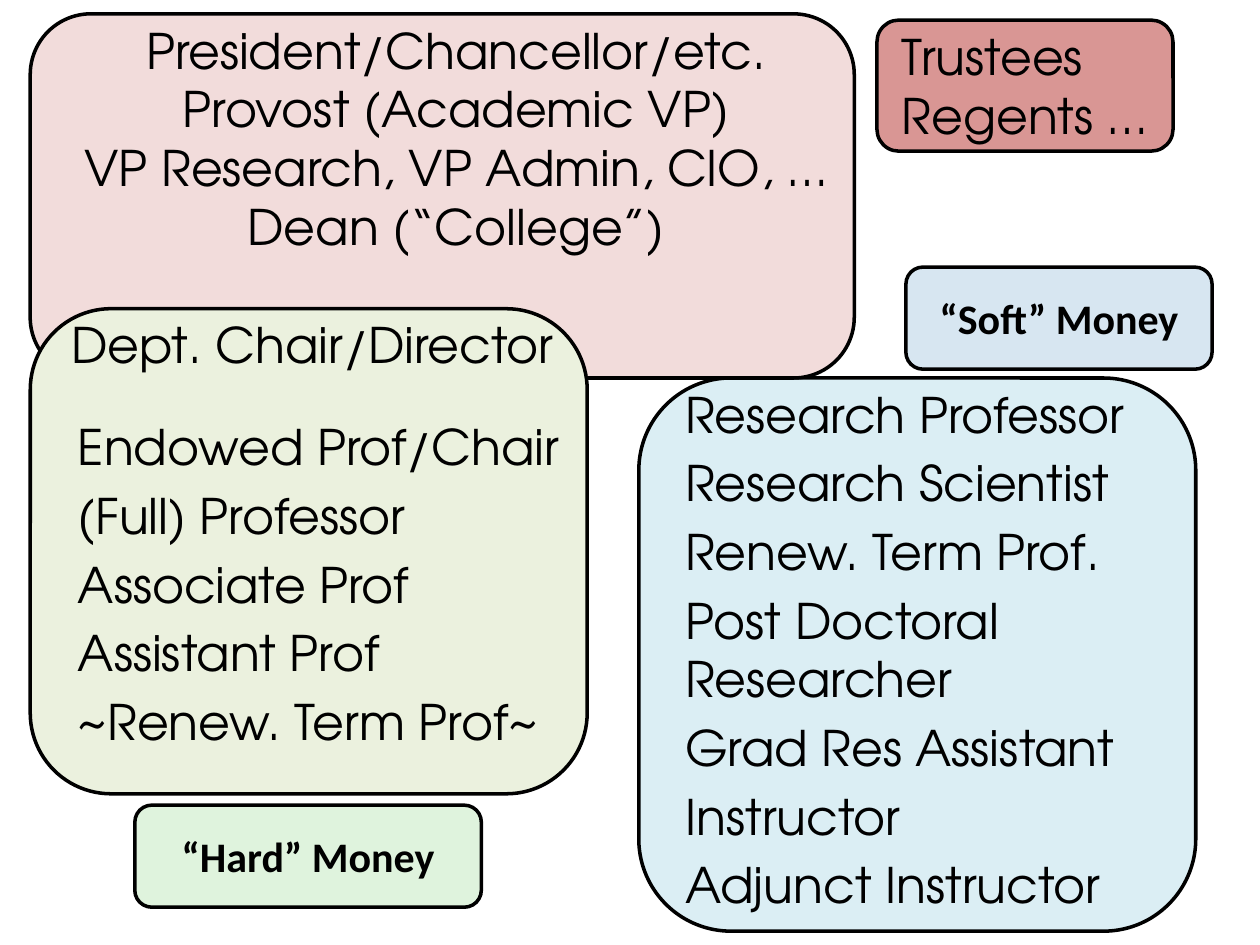
from pptx import Presentation
from pptx.dml.color import RGBColor
from pptx.enum.shapes import MSO_SHAPE
from pptx.enum.text import MSO_ANCHOR, PP_ALIGN
from pptx.util import Inches, Pt

LEFT, CENTER = PP_ALIGN.LEFT, PP_ALIGN.CENTER
BODY_FONT, LABEL_FONT = "TeX Gyre Adventor", "Calibri"

PANELS = [
    ((5.07, 3, 4.42, 4.39), "DBEEF4"),
    ((0.24, 0.11, 6.54, 2.89), "F2DCDB"),
    ((0.24, 2.45, 4.42, 3.85), "EBF1DE"),
    ((6.96, 0.16, 2.35, 1.04), "D99694"),
]
FACULTY = [
    "Endowed Prof/Chair",
    "(Full) Professor",
    "Associate Prof",
    "Assistant Prof",
    "~Renew. Term Prof~",
]
RESEARCH_STAFF = [
    "Research Professor",
    "Research Scientist",
    "Renew. Term Prof.",
    "Post Doctoral Researcher",
    "Grad Res Assistant",
    "Instructor",
    "Adjunct Instructor",
]
ADMINISTRATION = [
    ("President/Chancellor/etc.\vProvost (Academic VP)", CENTER),
    ("VP Research, VP Admin, CIO, …", CENTER),
    ("Dean (“College”)\v", CENTER),
    ("Dept. Chair/Director", LEFT),
]
TEXTS = [
    ((0.52, 3.26, 4.14, 2.85), [(rank, LEFT) for rank in FACULTY], 5.6),
    ((5.34, 3, 4.42, 4.34), [(rank, LEFT) for rank in RESEARCH_STAFF], 5.6),
    ((7.06, 0.16, 2.25, 1.04), [("Trustees\vRegents …", LEFT)], 0),
    ((0.47, 0.11, 6.3, 2.93), ADMINISTRATION, 0),
]
LABELS = [
    ((7.19, 2.12, 2.43, 0.81), "D7E6F1", "“Soft” Money"),
    ((1.07, 6.39, 2.75, 0.81), "DFF3DD", "“Hard” Money"),
]


def color(hex_value):
    """Turn a hex string into a colour."""
    return RGBColor.from_string(hex_value)


def add_panel(slide, box, fill):
    """Add an outlined rounded rectangle."""
    shape = slide.shapes.add_shape(MSO_SHAPE.ROUNDED_RECTANGLE, *map(Inches, box))
    shape.shadow.inherit = False
    shape.fill.solid()
    shape.fill.fore_color.rgb = color(fill)
    shape.line.color.rgb = color("000000")
    shape.line.width = Pt(2)
    return shape


def write(frame, lines, font_name, size, space=0, bold=False):
    """Fill a text frame with aligned paragraphs."""
    frame.word_wrap = True
    for index, (text, alignment) in enumerate(lines):
        paragraph = frame.add_paragraph() if index else frame.paragraphs[0]
        paragraph.text = text
        paragraph.alignment = alignment
        paragraph.space_before = Pt(space)
        font = paragraph.font
        font.name, font.size, font.bold = font_name, Pt(size), bold
        font.color.rgb = color("000000")


def main():
    """Build the slide of university roles."""
    presentation = Presentation()
    presentation.slide_width, presentation.slide_height = Inches(10), Inches(7.5)
    slide = presentation.slides.add_slide(presentation.slide_layouts[6])
    for box, fill in PANELS:
        add_panel(slide, box, fill)
    for box, lines, space in TEXTS:
        text_box = slide.shapes.add_textbox(*map(Inches, box))
        write(text_box.text_frame, lines, BODY_FONT, 28, space)
    for box, fill, label in LABELS:
        frame = add_panel(slide, box, fill).text_frame
        frame.vertical_anchor = MSO_ANCHOR.MIDDLE
        write(frame, [(label, CENTER)], LABEL_FONT, 24, bold=True)
    presentation.save("out.pptx")


if __name__ == "__main__":
    main()
